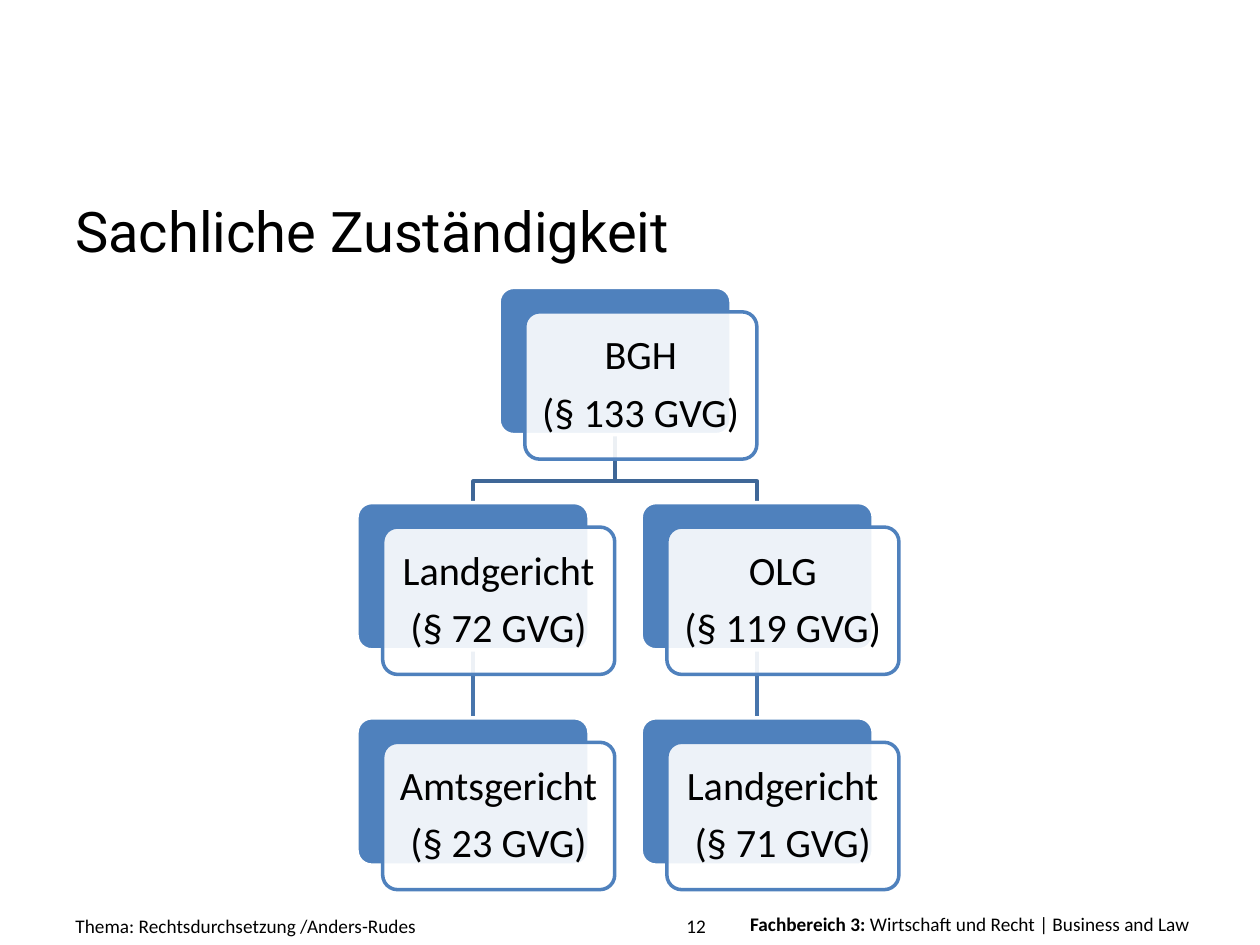
"""Slide: court hierarchy for subject-matter jurisdiction."""
from pptx import Presentation
from pptx.dml.color import RGBColor
from pptx.enum.shapes import MSO_CONNECTOR as Connector, MSO_SHAPE as Shape
from pptx.enum.text import MSO_ANCHOR as Anchor, PP_ALIGN as Align
from pptx.oxml.ns import qn
from pptx.util import Pt
from lxml.etree import SubElement

COLORS = {"text": "000000", "card": "4F81BD", "paper": "FFFFFF",
          "upper_link": "3F6797", "lower_link": "4875AC"}
CARD_W, CARD_H = 132.6, 84.2
SHIFT_X, SHIFT_Y = 14.7, 14
LEFT, TOP = 204, 164.2
COLUMN_STEP, ROW_STEP = 162.4, 123
BEND_Y = 275


def rgb(name):
    return RGBColor.from_string(COLORS[name])


def add_label(left, top, width, height, parts, size, font="Calibri",
              anchor=Anchor.BOTTOM, align=Align.LEFT):
    frame = slide.shapes.add_textbox(Pt(left), Pt(top), Pt(width), Pt(height)).text_frame
    frame.word_wrap = True
    frame.vertical_anchor = anchor
    paragraph = frame.paragraphs[0]
    paragraph.alignment = align
    for words, bold in parts:
        run = paragraph.add_run()
        run.text = words
        run.font.name, run.font.size, run.font.bold = font, Pt(size), bold
        run.font.color.rgb = rgb("text")


prs = Presentation()
prs.slide_width, prs.slide_height = Pt(720), Pt(540)
slide = prs.slides.add_slide(prs.slide_layouts[6])

add_label(405.4, 517.7, 281.5, 20.9,
          [("Fachbereich 3: ", True), ("Wirtschaft und Recht | Business and Law", False)],
          11, anchor=Anchor.TOP, align=Align.RIGHT)
add_label(36, 106.6, 645.8, 47.5, [("Sachliche Zuständigkeit", False)], 32, "Roboto")

root_x = LEFT + (COLUMN_STEP + CARD_W) / 2
for column in (1, 0):
    court_x = LEFT + column * COLUMN_STEP + CARD_W / 2
    middle_y = TOP + ROW_STEP

    lower_link = slide.shapes.add_connector(
        Connector.STRAIGHT, Pt(court_x), Pt(middle_y + CARD_H), Pt(court_x), Pt(middle_y + ROW_STEP))
    SubElement(lower_link._element.spPr, qn("a:effectLst"))

    outline = slide.shapes.build_freeform(Pt(root_x), Pt(TOP + CARD_H))
    outline.add_line_segments(
        [(Pt(root_x), Pt(BEND_Y)), (Pt(court_x), Pt(BEND_Y)), (Pt(court_x), Pt(middle_y))],
        close=False)
    upper_link = outline.convert_to_shape()
    upper_link.fill.background()
    upper_link.shadow.inherit = False

    for link, color in ((lower_link, "lower_link"), (upper_link, "upper_link")):
        link.line.color.rgb = rgb(color)
        link.line.width = Pt(2)

courts = [
    (0.5, 0, "BGH", "(§ 133 GVG)"),
    (0, 1, "Landgericht", "(§ 72 GVG)"),
    (0, 2, "Amtsgericht", "(§ 23 GVG)"),
    (1, 1, "OLG", "(§ 119 GVG)"),
    (1, 2, "Landgericht", "(§ 71 GVG)"),
]
for column, row, court, section in courts:
    x, y = LEFT + column * COLUMN_STEP, TOP + row * ROW_STEP
    for layer, (fill, line) in enumerate((("card", "paper"), ("paper", "card"))):
        card = slide.shapes.add_shape(
            Shape.ROUNDED_RECTANGLE, Pt(x + layer * SHIFT_X), Pt(y + layer * SHIFT_Y),
            Pt(CARD_W), Pt(CARD_H))
        card.adjustments[0] = 0.1
        card.shadow.inherit = False
        card.fill.solid()
        card.fill.fore_color.rgb = rgb(fill)
        card.line.color.rgb = rgb(line)
        card.line.width = Pt(2)

    tint = card._element.spPr.find(qn("a:solidFill")).find(qn("a:srgbClr"))
    SubElement(tint, qn("a:alpha"), val="90000")

    frame = card.text_frame
    frame.word_wrap = False
    frame.vertical_anchor = Anchor.MIDDLE
    frame.margin_left = frame.margin_right = frame.margin_top = frame.margin_bottom = Pt(7.2)
    frame.text = f"{court}\n{section}"
    frame.paragraphs[0].space_after = Pt(8)
    for paragraph in frame.paragraphs:
        paragraph.alignment = Align.CENTER
        paragraph.line_spacing = 0.9
        font = paragraph.runs[0].font
        font.name, font.size = "Calibri", Pt(23)
        font.color.rgb = rgb("text")

add_label(36, 518.4, 262, 20.9, [("Thema: Rechtsdurchsetzung /Anders-Rudes", False)], 11)
add_label(385.2, 518.4, 40.3, 20.9, [("12", False)], 11)

prs.save("out.pptx")
